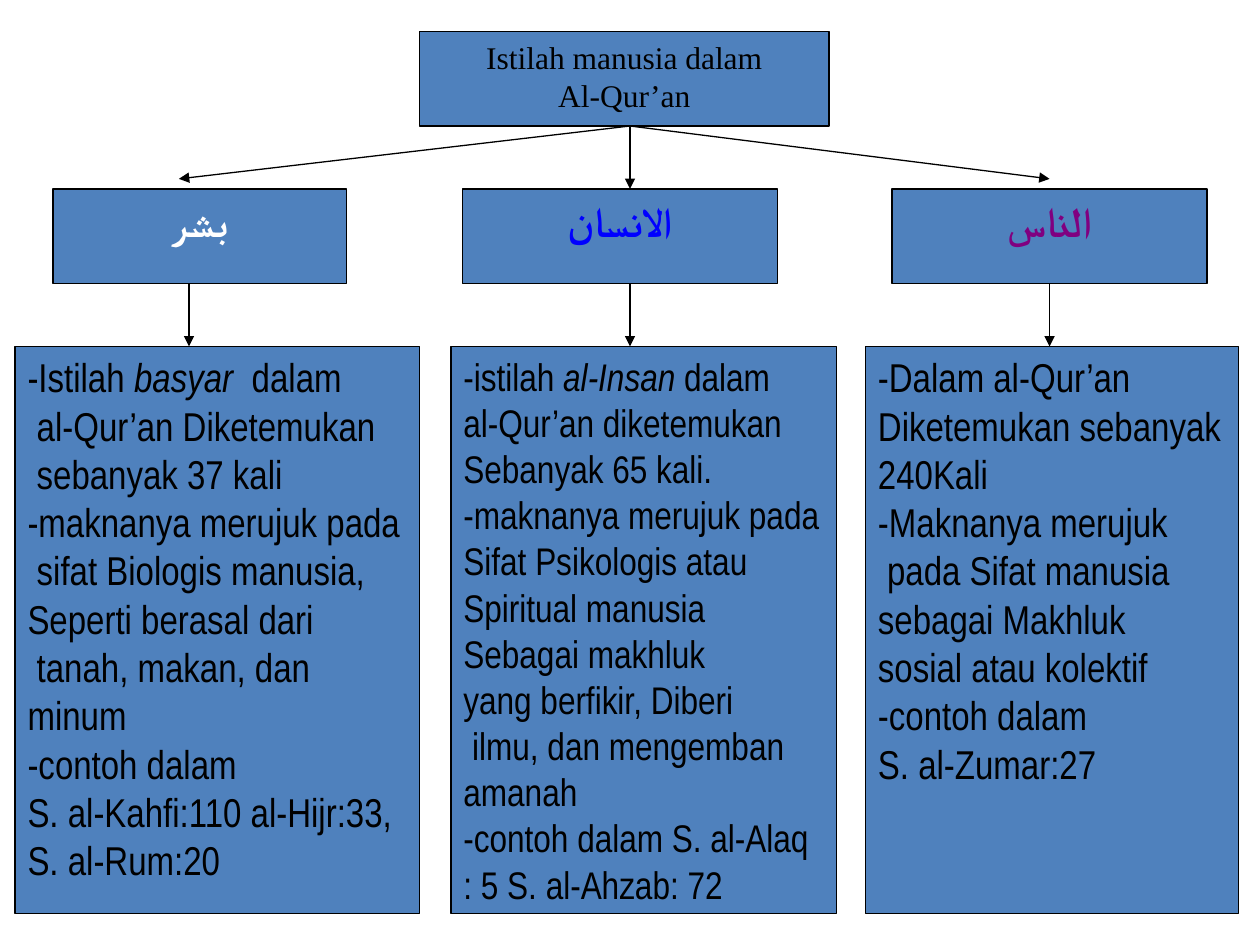
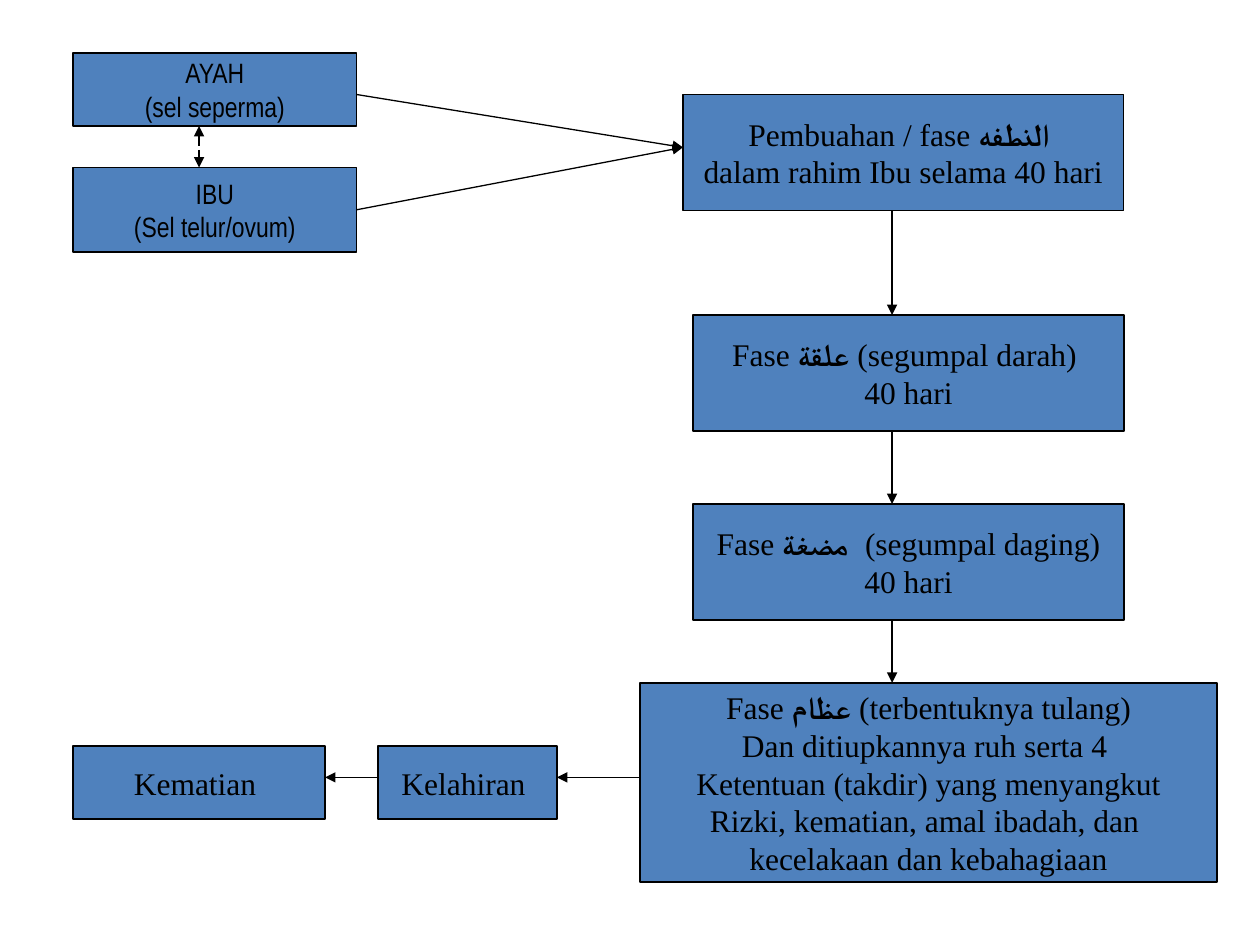
from itertools import pairwise

from lxml.etree import SubElement
from pptx import Presentation
from pptx.dml.color import RGBColor
from pptx.enum.dml import MSO_LINE
from pptx.enum.shapes import MSO_CONNECTOR, MSO_SHAPE
from pptx.enum.text import MSO_ANCHOR, PP_ALIGN
from pptx.oxml.ns import qn
from pptx.util import Inches, Pt

BOX_FILL = "4F81BD"
INK = "000000"
LINE_WIDTH = Pt(0.75)
BOTTOM, RIGHT = 2, 3

HEADING = {"name": "Times New Roman", "size": Pt(18)}
TERM = {"name": "Times New Roman", "size": Pt(24), "bold": True}
PARENT = {"name": "Arial Narrow", "size": Pt(16)}

BASYAR = """-Istilah *basyar * dalam
 al-Qur’an Diketemukan
 sebanyak 37 kali
-maknanya merujuk pada
 sifat Biologis manusia,
Seperti berasal dari
 tanah, makan, dan
minum
-contoh dalam
S. al-Kahfi:110 al-Hijr:33,
S. al-Rum:20"""

INSAN = """-istilah *al-Insan *dalam 
al-Qur’an diketemukan 
Sebanyak 65 kali.
-maknanya merujuk pada 
Sifat Psikologis atau 
Spiritual manusia 
Sebagai makhluk 
yang berfikir, Diberi
 ilmu, dan mengemban 
amanah
-contoh dalam S. al-Alaq
: 5 S. al-Ahzab: 72"""

NAAS = """-Dalam al-Qur’an 
Diketemukan sebanyak 
240Kali
-Maknanya merujuk
 pada Sifat manusia 
sebagai Makhluk 
sosial atau kolektif 
-contoh dalam 
S. al-Zumar:27"""

TULANG = """Fase *عظام* (terbentuknya tulang)
Dan ditiupkannya ruh serta 4 
Ketentuan (takdir) yang menyangkut
Rizki, kematian, amal ibadah, dan 
kecelakaan dan kebahagiaan"""

TERM_COLUMNS = [
    ((0.12, 1.5, 3.21, 5.75), 0.3, 2.33, 1.38, "بشر", "FFFFFF", BASYAR, 23, PP_ALIGN.LEFT),
    ((3.58, 1.5, 3.06, 5.75), 0.09, 2.5, 1.42, "الانسان", "0000FF", INSAN, 22, PP_ALIGN.JUSTIFY),
    ((6.87, 1.5, 2.96, 5.75), 0.21, 2.5, 1.46, "الناس", "800080", NAAS, 23, PP_ALIGN.JUSTIFY),
]

PHASES = [
    (0.34, 0, 3.5, 0.92, "Pembuahan / fase *النطفه *\ndalam rahim Ibu selama 40 hari"),
    (0.42, 1.75, 3.42, 0.92, "Fase *علقة* (segumpal darah) \n40 hari"),
    (0.42, 3.25, 3.42, 0.92, "Fase *مضغة * (segumpal daging)\n40 hari"),
    (0, 4.67, 4.58, 1.58, TULANG),
]


def color(value):
    return RGBColor.from_string(value)


def outline(line):
    line.color.rgb = color(INK)
    line.width = LINE_WIDTH


def text_box(slide, box, text, font, ink=INK, align=PP_ALIGN.CENTER,
             anchor=MSO_ANCHOR.MIDDLE, emphasis="bold"):
    panel = slide.shapes.add_shape(MSO_SHAPE.RECTANGLE, *map(Inches, box))
    panel.shadow.inherit = False
    panel.fill.solid()
    panel.fill.fore_color.rgb = color(BOX_FILL)
    outline(panel.line)
    frame = panel.text_frame
    frame.word_wrap = False
    frame.vertical_anchor = anchor
    for row, wording in enumerate(text.split("\n")):
        paragraph = frame.add_paragraph() if row else frame.paragraphs[0]
        paragraph.alignment = align
        for part, words in enumerate(wording.split("*")):
            if not words:
                continue
            run = paragraph.add_run()
            run.text = words
            run.font.color.rgb = color(ink)
            style = font | {emphasis: True} if part % 2 else font
            for attribute, value in style.items():
                setattr(run.font, attribute, value)
    return panel


def arrow(slide, start, end, heads=("tailEnd",), dash=None):
    link = slide.shapes.add_connector(MSO_CONNECTOR.STRAIGHT, *map(Inches, (*start, *end)))
    outline(link.line)
    if dash:
        link.line.dash_style = dash
    properties = link.line._get_or_add_ln()
    for head in heads:
        SubElement(properties, qn(f"a:{head}"), type="triangle")
    SubElement(link._element.spPr, qn("a:effectLst"))
    return link


def title_region(slide, box):
    left, top, width, height = box
    text_box(slide, box, "Istilah manusia dalam\nAl-Qur’an", HEADING, anchor=MSO_ANCHOR.TOP)
    origin = (left + 1.67, top + height)
    for across, down in [(-3.58, 0.42), (3.33, 0.42), (0, 0.5)]:
        arrow(slide, origin, (origin[0] + across, origin[1] + down))


def term_column(slide, box, term_offset, term_width, arrow_offset,
                term, term_ink, meaning, size, align):
    left, top, width, height = box
    term_height, gap = 0.75, 0.5
    detail_top = top + term_height + gap
    heading = text_box(slide, (left + term_offset, top, term_width, term_height),
                       term, TERM, term_ink, anchor=MSO_ANCHOR.TOP)
    text_box(slide, (left, detail_top, width, height - term_height - gap), meaning,
             {"name": "Arial Narrow", "size": Pt(size)}, align=align,
             anchor=MSO_ANCHOR.TOP, emphasis="italic")
    arrow_x = left + arrow_offset
    descent = arrow(slide, (arrow_x, top + term_height), (arrow_x, detail_top))
    if abs(term_offset + term_width / 2 - arrow_offset) < 0.01:
        descent.begin_connect(heading, BOTTOM)


def parents_region(slide, box, fertilisation):
    left, top, width, height = box
    right = left + width
    text_box(slide, (left, top, width, 0.58), "AYAH\n(sel seperma)", PARENT)
    mother = text_box(slide, (left, top + 0.91, width, 0.67), "IBU\n(Sel telur/ovum)", PARENT)
    arrow(slide, (left + 1, top + 0.58), (left + 1, top + 0.91),
          ("headEnd", "tailEnd"), MSO_LINE.LONG_DASH)
    arrow(slide, (right, top + 0.33), fertilisation)
    arrow(slide, (right, top + 1.25), fertilisation).begin_connect(mother, RIGHT)


def phases_region(slide, box):
    left, top, width, height = box
    for across, down, phase_width, phase_height, wording in PHASES:
        text_box(slide, (left + across, top + down, phase_width, phase_height), wording, HEADING)
    for earlier, later in pairwise(PHASES):
        arrow(slide, (left + 2, top + earlier[1] + earlier[3]), (left + 2, top + later[1]))


def life_region(slide, box):
    left, top, width, height = box
    birth_left, birth_width, death_width = left + 2.42, 1.42, 2
    text_box(slide, (left, top, death_width, height), "Kematian ", HEADING)
    text_box(slide, (birth_left, top, birth_width, height), "Kelahiran ", HEADING)
    level = top + 0.25
    arrow(slide, (left + width, level), (birth_left + birth_width, level))
    arrow(slide, (birth_left, level), (left + death_width, level))


def terms_slide(slide):
    title_region(slide, (3.33, 0.25, 3.25, 0.75))
    for column in TERM_COLUMNS:
        term_column(slide, *column)


def creation_slide(slide):
    parents_region(slide, (0.58, 0.42, 2.25, 1.58), (5.42, 1.17))
    phases_region(slide, (5.08, 0.75, 4.58, 6.25))
    life_region(slide, (0.58, 5.92, 4.5, 0.58))


def main():
    deck = Presentation()
    deck.slide_width, deck.slide_height = Inches(10), Inches(7.5)
    blank = deck.slide_layouts[6]
    for build in (terms_slide, creation_slide):
        build(deck.slides.add_slide(blank))
    deck.save("out.pptx")


if __name__ == "__main__":
    main()
